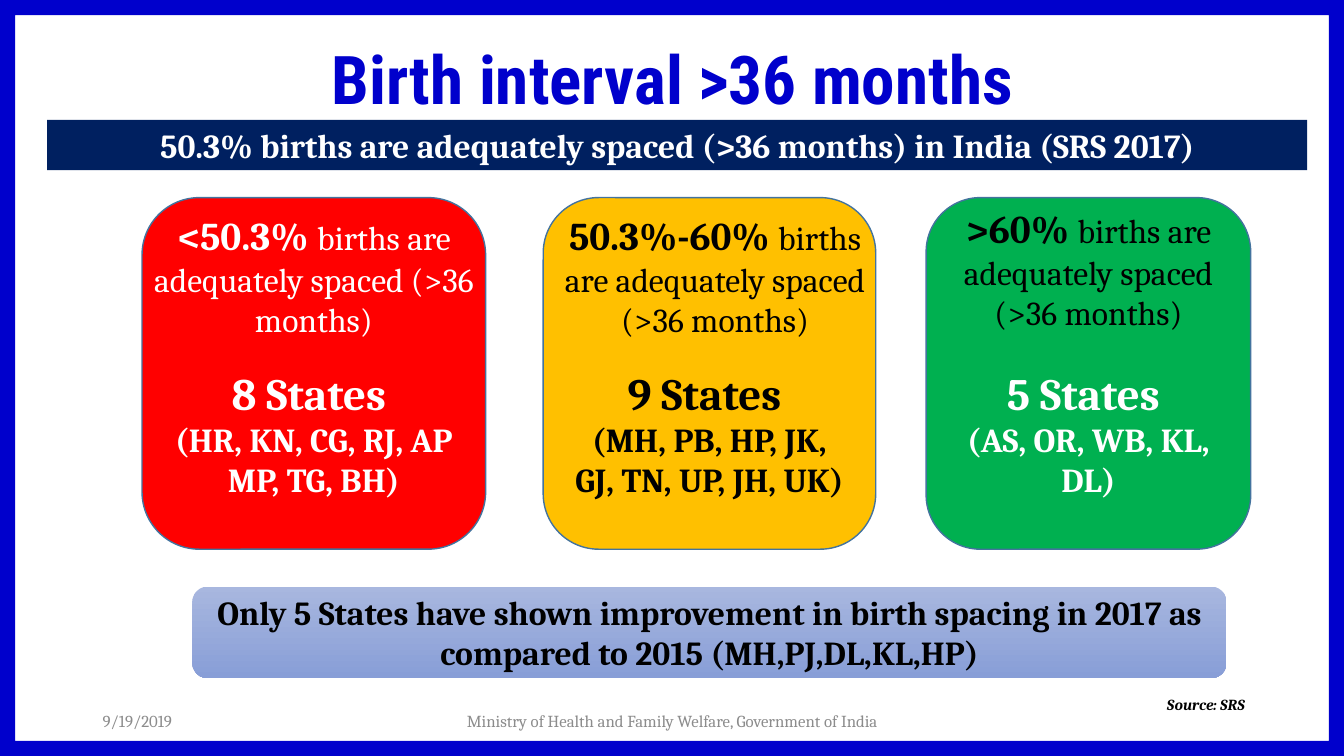
import pptx
import pptx.util
import pptx.dml.color
import pptx.enum.shapes
import pptx.enum.text

Cm = pptx.util.Cm
RGBColor = pptx.dml.color.RGBColor
MSO_SHAPE = pptx.enum.shapes.MSO_SHAPE
PP_ALIGN = pptx.enum.text.PP_ALIGN
MSO_ANCHOR = pptx.enum.text.MSO_ANCHOR

BLUE = RGBColor(0x00, 0x00, 0xCC)
NAVY = RGBColor(0x00, 0x20, 0x60)
RED = RGBColor(0xFF, 0x00, 0x00)
AMBER = RGBColor(0xFF, 0xC0, 0x00)
GREEN = RGBColor(0x00, 0xB0, 0x50)
OUTLINE = RGBColor(0x43, 0x73, 0x9E)
NOTE_TOP = RGBColor(0xA8, 0xB7, 0xDF)
NOTE_BOTTOM = RGBColor(0x88, 0x9E, 0xD7)
GREY = RGBColor(0x8C, 0x8C, 0x8C)
WHITE = RGBColor(0xFF, 0xFF, 0xFF)
BLACK = RGBColor(0x00, 0x00, 0x00)

presentation = pptx.Presentation()
presentation.slide_width = Cm(33.87)
presentation.slide_height = Cm(19.05)
slide = presentation.slides.add_slide(presentation.slide_layouts[5])


def add_box(preset, left, top, width, height, fill=None, line=None):
    bounds = [Cm(length) for length in (left, top, width, height)]
    if preset is None:
        shape = slide.shapes.add_textbox(*bounds)
    else:
        shape = slide.shapes.add_shape(preset, *bounds)
        shape.shadow.inherit = False
        if fill is not None:
            shape.fill.solid()
            shape.fill.fore_color.rgb = fill
        if line is None:
            shape.line.fill.background()
        else:
            shape.line.color.rgb = line
            shape.line.width = pptx.util.Pt(1)
    shape.text_frame.word_wrap = True
    return shape


def add_run(paragraph, text, size, color, bold=True, font="Cambria", align=PP_ALIGN.CENTER):
    paragraph.alignment = align
    run = paragraph.add_run()
    run.text = text
    run.font.name = font
    run.font.size = pptx.util.Pt(size)
    run.font.bold = bold
    run.font.color.rgb = color
    return run


frame = add_box(MSO_SHAPE.FRAME, 0, 0, 33.87, 19.05, BLUE)
frame.adjustments[0] = 0.02

title = slide.shapes.title
title.left, title.top, title.width, title.height = Cm(2.34), Cm(1.02), Cm(29.21), Cm(2.13)
title.text_frame.auto_size = pptx.enum.text.MSO_AUTO_SIZE.NONE
title.text_frame.vertical_anchor = MSO_ANCHOR.MIDDLE
title_paragraph = title.text_frame.paragraphs[0]
title_paragraph.line_spacing = 0.9
add_run(title_paragraph, "Birth interval >36 months", 48, BLUE, font="Roboto Condensed")

cards = [
    (3.58, 8.66, RED, WHITE, "8 States ", "(HR, KN, CG, RJ, AP MP, TG, BH)",
     5.21, 8.66, WHITE, "<50.3% "),
    (13.69, 8.38, AMBER, BLACK, "9 States ", "(MH, PB, HP, JK, GJ, TN, UP, JH, UK)",
     5.21, 8.66, BLACK, "50.3%-60% "),
    (23.34, 8.18, GREEN, WHITE, "5 States ", "(AS, OR, WB, KL, DL)",
     5.03, 8.18, BLACK, ">60% "),
]
for (left, width, fill, color, count, states,
     caption_top, caption_width, caption_color, share) in cards:
    card = add_box(MSO_SHAPE.ROUNDED_RECTANGLE, left, 4.98, width, 8.86, fill, OUTLINE)
    card.text_frame.vertical_anchor = MSO_ANCHOR.MIDDLE
    card.text_frame.margin_top = Cm(3.1)
    add_run(card.text_frame.paragraphs[0], count, 32, color)
    add_run(card.text_frame.add_paragraph(), states, 24, color)

    caption = add_box(None, left, caption_top, caption_width, 3.51)
    caption_paragraph = caption.text_frame.paragraphs[0]
    add_run(caption_paragraph, share, 28, caption_color)
    add_run(caption_paragraph, "births are adequately spaced (>36 months)", 24, caption_color, False)

banner = add_box(MSO_SHAPE.RECTANGLE, 1.19, 3.02, 31.75, 1.27, NAVY)
banner.text_frame.vertical_anchor = MSO_ANCHOR.TOP
add_run(banner.text_frame.paragraphs[0],
        "50.3% births are adequately spaced (>36 months) in India (SRS 2017)", 24, WHITE)

note = add_box(MSO_SHAPE.ROUNDED_RECTANGLE, 4.85, 14.78, 26.06, 2.31)
note.fill.gradient()
note.fill.gradient_angle = 270
for stop, color in zip(note.fill.gradient_stops, (NOTE_TOP, NOTE_BOTTOM)):
    stop.color.rgb = color
note.text_frame.vertical_anchor = MSO_ANCHOR.MIDDLE
add_run(note.text_frame.paragraphs[0],
        "Only 5 States have shown improvement in birth spacing in 2017 as "
        "compared to 2015 (MH,PJ,DL,KL,HP)", 24, BLACK)

source = add_box(None, 29.16, 17.4, 3.51, 0.74)
source_run = add_run(source.text_frame.paragraphs[0], "Source: SRS", 11, BLACK,
                     align=PP_ALIGN.LEFT)
source_run.font.italic = True

footers = [
    (2.34, 7.62, "9/19/2019", PP_ALIGN.LEFT),
    (11.23, 11.43, "Ministry of Health and Family Welfare, Government of India", PP_ALIGN.CENTER),
]
for left, width, text, align in footers:
    footer = add_box(None, left, 17.65, width, 1.02)
    footer.text_frame.vertical_anchor = MSO_ANCHOR.MIDDLE
    add_run(footer.text_frame.paragraphs[0], text, 12, GREY, False, align=align)

presentation.save("out.pptx")
